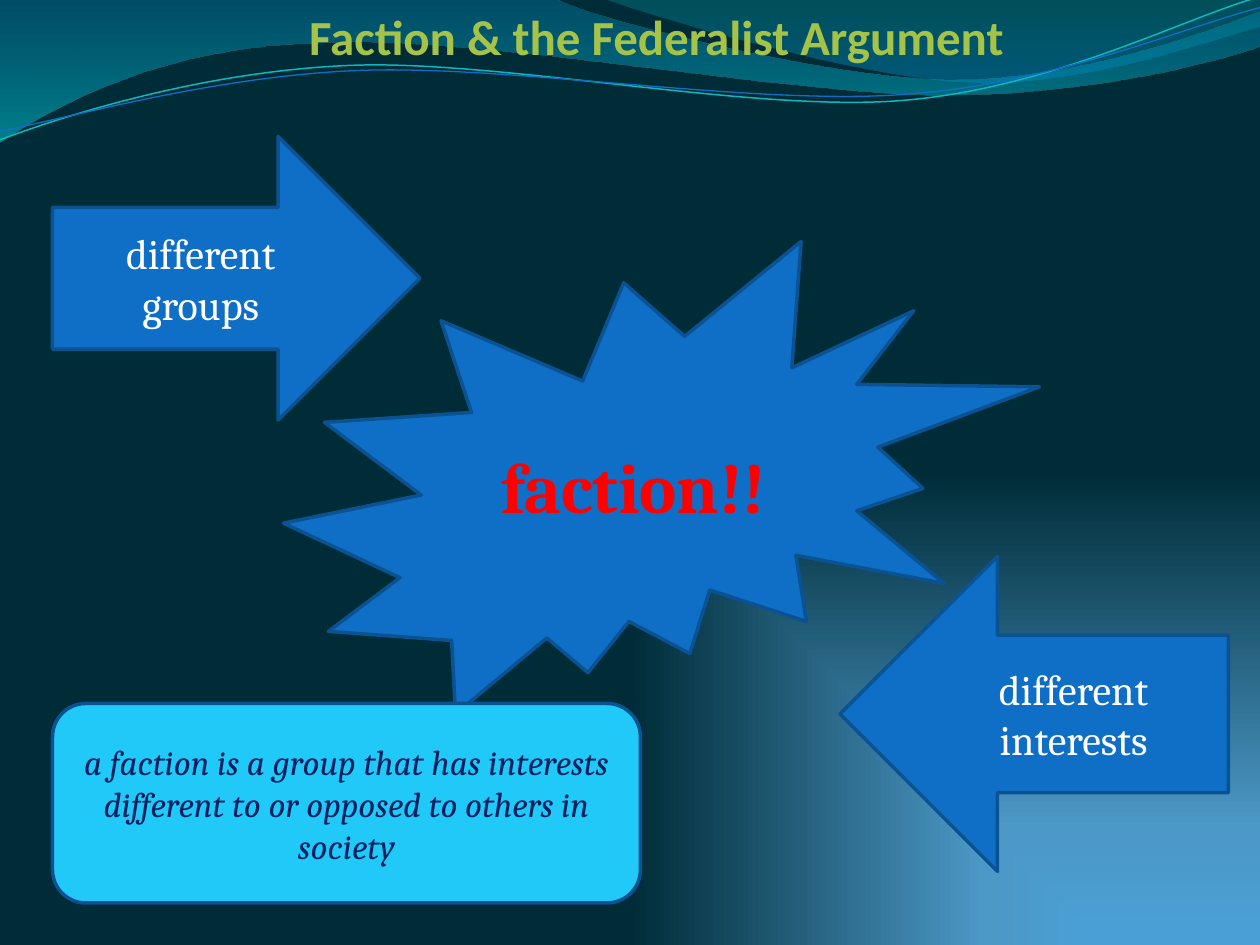
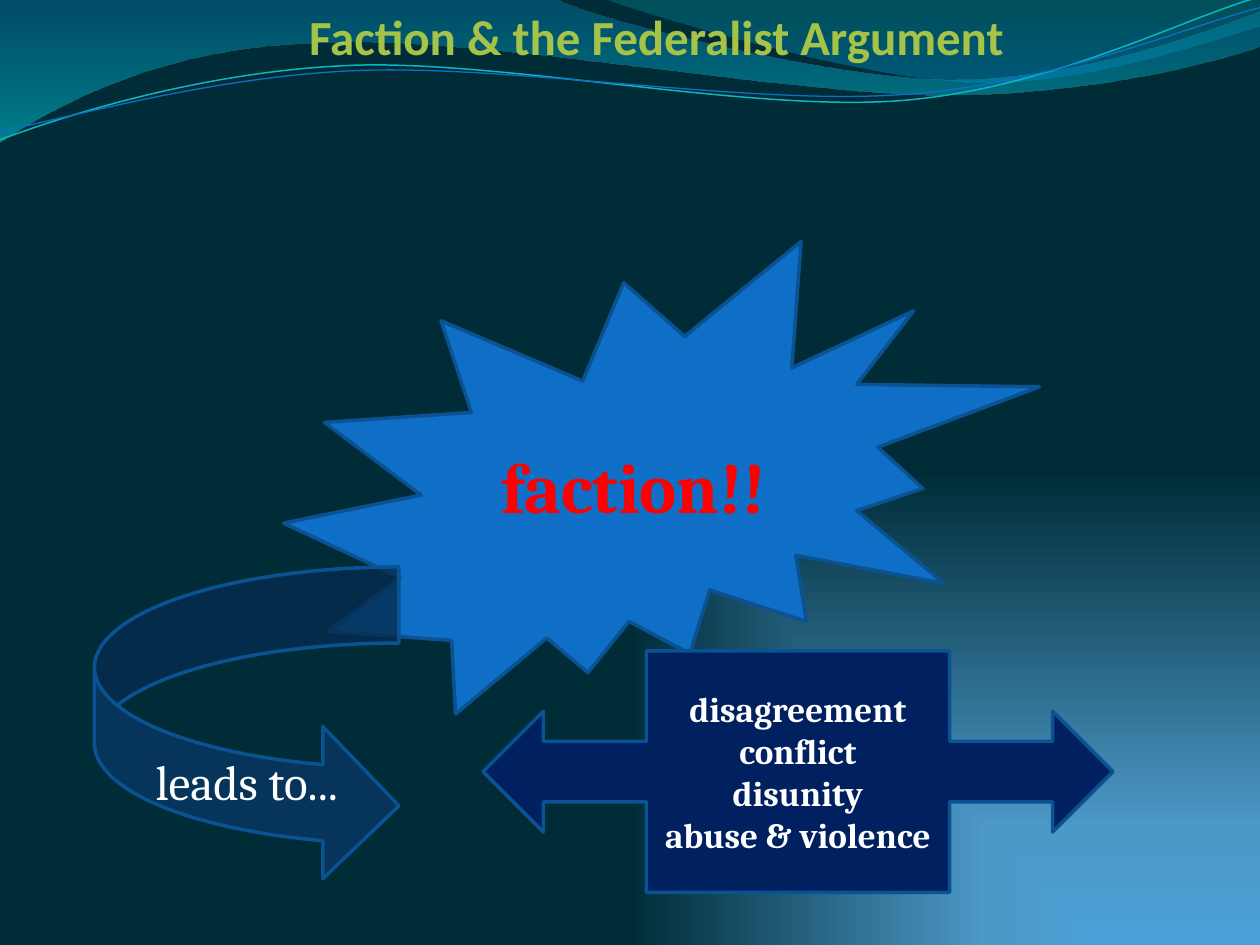
from itertools import count
from math import cos, radians, sin

from lxml import etree
from pptx import Presentation
from pptx.dml.color import RGBColor
from pptx.enum.shapes import MSO_SHAPE as Preset
from pptx.enum.text import MSO_ANCHOR, MSO_AUTO_SIZE, PP_ALIGN
from pptx.oxml.ns import qn
from pptx.util import Inches, Pt

# Content: places are (left, top, width, height) in grid units of 1/12 inch
COLUMNS, ROWS = 120, 90
UNIT = Inches(1) // 12

BLUE, OUTLINE, NAVY, WHITE = "0F6FC6", "0B5292", "002060", "FFFFFF"
TITLE = "Faction & the Federalist Argument"
TITLE_PLACE = (17, 0, 91, 6.84)

FACTION = dict(preset=Preset.EXPLOSION2, place=(27, 23, 72, 45),
               lines=["faction!!"], size=40, color="FF0000", bold=True)

SLIDES = [
    [
        FACTION,
        dict(preset=Preset.RIGHT_ARROW, place=(5, 13, 35, 27),
             lines=["different", "groups"], size=24),
        dict(preset=Preset.LEFT_ARROW, place=(80, 53, 37, 30),
             lines=["different interests"], size=24),
        dict(preset=Preset.ROUNDED_RECTANGLE, place=(5, 67, 56, 19), fill="20C9F8",
             lines=["a faction is a group that has interests different to "
                    "or opposed to others in society"],
             size=20, color=NAVY, italic=True),
    ],
    [
        FACTION,
        dict(preset=Preset.CURVED_RIGHT_ARROW, place=(9, 54, 29, 30), fill="083763",
             opacity=80, lines=["leads to..."], size=28, top_inset=0.95),
        dict(preset=Preset.LEFT_RIGHT_ARROW_CALLOUT, place=(46, 62, 60, 23), fill=NAVY,
             lines=["disagreement", "conflict", "disunity", "abuse & violence"],
             size=20, bold=True),
    ],
]

# Background and waves, in inches: stops are (position %, colour, opacity %);
# a step of two numbers is straight, one of six is a Bezier curve
BACKGROUND_STOPS = [(0, "4AA0D6", 100), (25, "4C98C7", 100), (100, "002C38", 100)]
BANDS = [
    ((-0.01, -0.01, 10.02, 1.14),
     [(0, 0), (4.4, -0.01), (4.76, 0.17, 6.64, 0.63, 7.58, 0.63),
      (8.53, 0.63, 9.58, 0.26, 10, 0.09), (10.01, 0.36),
      (9.83, 0.44, 8.7, 0.76, 7.46, 0.75), (6.22, 0.75, 3.82, 0.28, 2.57, 0.34),
      (1.29, 0.36, 0.46, 0.83, -0.01, 1.13), (0, 0)],
     [(0, "0074A1", 45), (100, "00C6CF", 55)]),
    ((4.79, -0.01, 5.21, 0.7),
     [(4.79, -0.01), (5.09, 0.11, 6.82, 0.62, 7.69, 0.65),
      (8.56, 0.69, 9.61, 0.32, 10, 0.21), (10, 0), (4.79, -0.01)],
     [(0, "00A1A9", 30), (80, "008BBF", 45)]),
]
WAVE_TILT = -2.7
WAVES = [
    ((-0.02, 0.22, 10.02, 0.71),
     [(0, 1.11), (0.48, 0.93, 1.58, 0.57, 2.77, 0.52),
      (3.95, 0.47, 5.93, 0.89, 7.13, 0.8), (8.33, 0.71, 9.38, 0.15, 9.98, -0.02)],
     "0AB8BF", 0.85),
    ((-0.02, 0.3, 10.03, 0.58),
     [(0, 1.04), (0.47, 0.96, 1.64, 0.61, 2.83, 0.56),
      (4.03, 0.51, 5.97, 0.84, 7.17, 0.75), (8.36, 0.67, 9.41, 0.21, 10, 0.06)],
     BLUE, 0.75),
]


# Colour and gradient helpers
def rgb(value):
    return RGBColor.from_string(value)


def set_opacity(color_element, percent):
    etree.SubElement(color_element, qn("a:alpha"), val=str(percent * 1000))


def replace_with_gradient(solid_fill, stops, corner=False):
    gradient = etree.Element(qn("a:gradFill"), rotWithShape="1")
    stop_list = etree.SubElement(gradient, qn("a:gsLst"))
    for position, color, opacity in stops:
        stop = etree.SubElement(stop_list, qn("a:gs"), pos=str(position * 1000))
        color_element = etree.SubElement(stop, qn("a:srgbClr"), val=color)
        if opacity < 100:
            set_opacity(color_element, opacity)
    if corner:
        shade = etree.SubElement(gradient, qn("a:path"), path="rect")
        etree.SubElement(shade, qn("a:fillToRect"), l="100000", t="100000")
    else:
        etree.SubElement(gradient, qn("a:lin"), ang="5400000", scaled="1")
    solid_fill.getparent().replace(solid_fill, gradient)


# Curved outlines: points are turned back by the tilt, then the shape is tilted
def add_outline(slide, place, steps, close=False, tilt=0):
    left, top, width, height = place
    middle_x, middle_y = left + width / 2, top + height / 2
    cosine, sine = cos(radians(-tilt)), sin(radians(-tilt))

    def local(x, y):
        x, y = x - middle_x, y - middle_y
        return (Inches(x * cosine - y * sine + width / 2),
                Inches(x * sine + y * cosine + height / 2))

    builder = slide.shapes.build_freeform(*local(*steps[0]))
    builder.add_line_segments([local(*step[-2:]) for step in steps[1:]], close=close)
    shape = builder.convert_to_shape()
    shape.left, shape.top, shape.width, shape.height = map(Inches, place)
    shape.rotation = tilt
    shape.shadow.inherit = False

    outline = shape.element.spPr.find(".//" + qn("a:path"))
    outline.set("w", str(shape.width))
    outline.set("h", str(shape.height))
    for segment, step in zip(list(outline), steps):
        tag = "a:cubicBezTo" if len(step) == 6 else segment.tag
        curve = etree.Element(qn(tag) if len(step) == 6 else tag)
        for x, y in zip(step[::2], step[1::2]):
            local_x, local_y = local(x, y)
            etree.SubElement(curve, qn("a:pt"), x=str(local_x), y=str(local_y))
        outline.replace(segment, curve)
    return shape


# The master carries the background, bands and waves for every slide
def move_to_master(shapes, master):
    for number, shape in zip(count(101), shapes):
        shape.element.nvSpPr.cNvPr.set("id", str(number))
        master.element.cSld.spTree.append(shape.element)


def build_master(master, slide):
    master.background.fill.solid()
    background = master.element.find(".//" + qn("p:bgPr"))
    replace_with_gradient(background.find(qn("a:solidFill")), BACKGROUND_STOPS, corner=True)
    shapes = []
    for place, steps, stops in BANDS:
        band = add_outline(slide, place, steps, close=True)
        band.line.fill.background()
        band.fill.solid()
        replace_with_gradient(band.element.spPr.find(qn("a:solidFill")), stops)
        shapes.append(band)
    for place, steps, color, width in WAVES:
        wave = add_outline(slide, place, steps, tilt=WAVE_TILT)
        wave.fill.background()
        wave.line.color.rgb = rgb(color)
        wave.line.width = Pt(width)
        shapes.append(wave)
    move_to_master(shapes, master)


# Slide parts
def grid(place):
    return [round(value * UNIT) for value in place]


def write(frame, lines, size, color=WHITE, font="Cambria", bold=False, italic=False):
    frame.word_wrap = True
    frame.text = "\n".join(lines)
    for paragraph in frame.paragraphs:
        paragraph.alignment = PP_ALIGN.CENTER
        paragraph.font.name = font
        paragraph.font.size = Pt(size)
        paragraph.font.bold = bold
        paragraph.font.italic = italic
        paragraph.font.color.rgb = rgb(color)


def add_title(slide):
    frame = slide.shapes.add_textbox(*grid(TITLE_PLACE)).text_frame
    write(frame, [TITLE], 28, "A5C249", "Calibri", bold=True)
    frame.auto_size = MSO_AUTO_SIZE.SHAPE_TO_FIT_TEXT


def add_figure(slide, preset, place, lines, size, fill=BLUE, opacity=100,
               top_inset=0.05, **style):
    shape = slide.shapes.add_shape(preset, *grid(place))
    shape.shadow.inherit = False
    shape.fill.solid()
    shape.fill.fore_color.rgb = rgb(fill)
    if opacity < 100:
        set_opacity(shape.element.spPr.find(qn("a:solidFill"))[0], opacity)
    shape.line.color.rgb = rgb(OUTLINE)
    shape.line.width = Pt(2)
    shape.text_frame.vertical_anchor = MSO_ANCHOR.MIDDLE
    shape.text_frame.margin_top = Inches(top_inset)
    write(shape.text_frame, lines, size, **style)


def main():
    presentation = Presentation()
    presentation.slide_width = COLUMNS * UNIT
    presentation.slide_height = ROWS * UNIT
    blank = presentation.slide_layouts[6]
    slides = [presentation.slides.add_slide(blank) for _ in SLIDES]
    build_master(presentation.slide_master, slides[0])
    for slide, figures in zip(slides, SLIDES):
        add_title(slide)
        for figure in figures:
            add_figure(slide, **figure)
    presentation.save("out.pptx")


if __name__ == "__main__":
    main()
